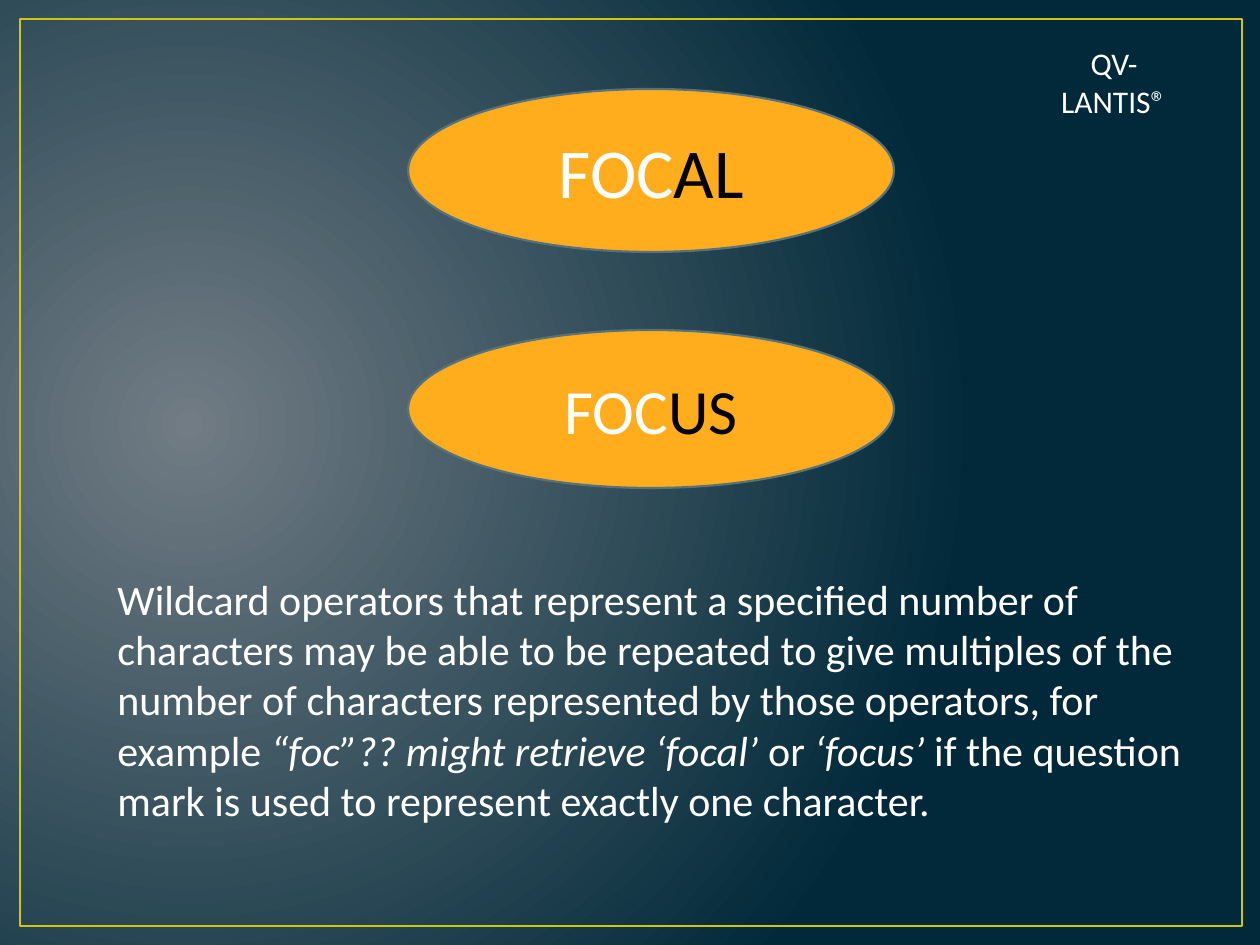
import pptx
import pptx.util
import pptx.dml.color
import pptx.enum.shapes
import pptx.enum.text
import pptx.oxml
import pptx.oxml.ns
import dataclasses


@dataclasses.dataclass
class Theme:
    font: str = "Calibri"
    glow: str = "717C84"
    night: str = "01293A"
    frame: str = "CFC60D"
    amber: str = "FFAD1C"
    edge: str = "57727A"
    white: str = "FFFFFF"
    black: str = "000000"
    large: int = 40
    medium: int = 36
    body: int = 24
    label: int = 18


theme = Theme()
SCALE = 914400 / 126
shapes_enum = pptx.enum.shapes.MSO_SHAPE
text_enum = pptx.enum.text


def place(*box):
    return [pptx.util.Emu(round(n * SCALE)) for n in box]


def write(para, text, size, color, slant=False):
    run = para.add_run()
    run.text = text
    run.font.name = theme.font
    run.font.size = pptx.util.Pt(size)
    run.font.italic = slant
    run.font.color.rgb = pptx.dml.color.RGBColor.from_string(color)


deck = pptx.Presentation()
deck.slide_width, deck.slide_height = place(1260, 945)
slide = deck.slides.add_slide(deck.slide_layouts[6])

fill = slide.background.fill
fill.gradient()
for stop, color, pos in zip(fill.gradient_stops, (theme.glow, theme.night), (0, 1)):
    stop.color.rgb = pptx.dml.color.RGBColor.from_string(color)
    stop.position = pos
grad = next(slide.element.iter(pptx.oxml.ns.qn("a:gradFill")))
linear = grad.find(pptx.oxml.ns.qn("a:lin"))
radial = pptx.oxml.parse_xml(
    f'<a:path {pptx.oxml.ns.nsdecls("a")} path="circle">'
    '<a:fillToRect l="15000" t="50000" r="85000" b="60000"/></a:path>'
)
grad.replace(linear, radial)

frame = slide.shapes.add_shape(shapes_enum.RECTANGLE, *place(20, 19, 1222, 907))
frame.shadow.inherit = False
frame.fill.background()
frame.line.color.rgb = pptx.dml.color.RGBColor.from_string(theme.frame)
frame.line.width = pptx.util.Pt(1.5)

for top, height, end, size in (
    (89, 163, "AL", theme.large),
    (330, 158, "US", theme.medium),
):
    oval = slide.shapes.add_shape(shapes_enum.OVAL, *place(408, top, 486, height))
    oval.shadow.inherit = False
    oval.fill.solid()
    oval.fill.fore_color.rgb = pptx.dml.color.RGBColor.from_string(theme.amber)
    oval.line.color.rgb = pptx.dml.color.RGBColor.from_string(theme.edge)
    oval.line.width = pptx.util.Pt(1.25)
    oval.text_frame.vertical_anchor = text_enum.MSO_ANCHOR.MIDDLE
    para = oval.text_frame.paragraphs[0]
    para.alignment = text_enum.PP_ALIGN.CENTER
    write(para, "FOC", size, theme.white)
    write(para, end, size, theme.black)

body = slide.shapes.add_textbox(*place(105, 567, 1092, 267)).text_frame
body.word_wrap = True
body.auto_size = text_enum.MSO_AUTO_SIZE.SHAPE_TO_FIT_TEXT
for text, slant in (
    ("Wildcard operators that represent a specified number of characters "
     "may be able to be repeated to give multiples of the number of characters "
     "represented by those operators, for example ", False),
    ("“foc”?? might retrieve ‘focal’ ", True),
    ("or ", False),
    ("‘focus’ ", True),
    ("if the question mark is used to represent exactly one character.", False),
):
    write(body.paragraphs[0], text, theme.body, theme.white, slant)

label = slide.shapes.add_textbox(*place(1029, 38, 170, 50)).text_frame
label.word_wrap = False
label.auto_size = text_enum.MSO_AUTO_SIZE.SHAPE_TO_FIT_TEXT
label.paragraphs[0].alignment = text_enum.PP_ALIGN.CENTER
write(label.paragraphs[0], "QV-LANTIS®", theme.label, theme.white)

deck.save("out.pptx")
